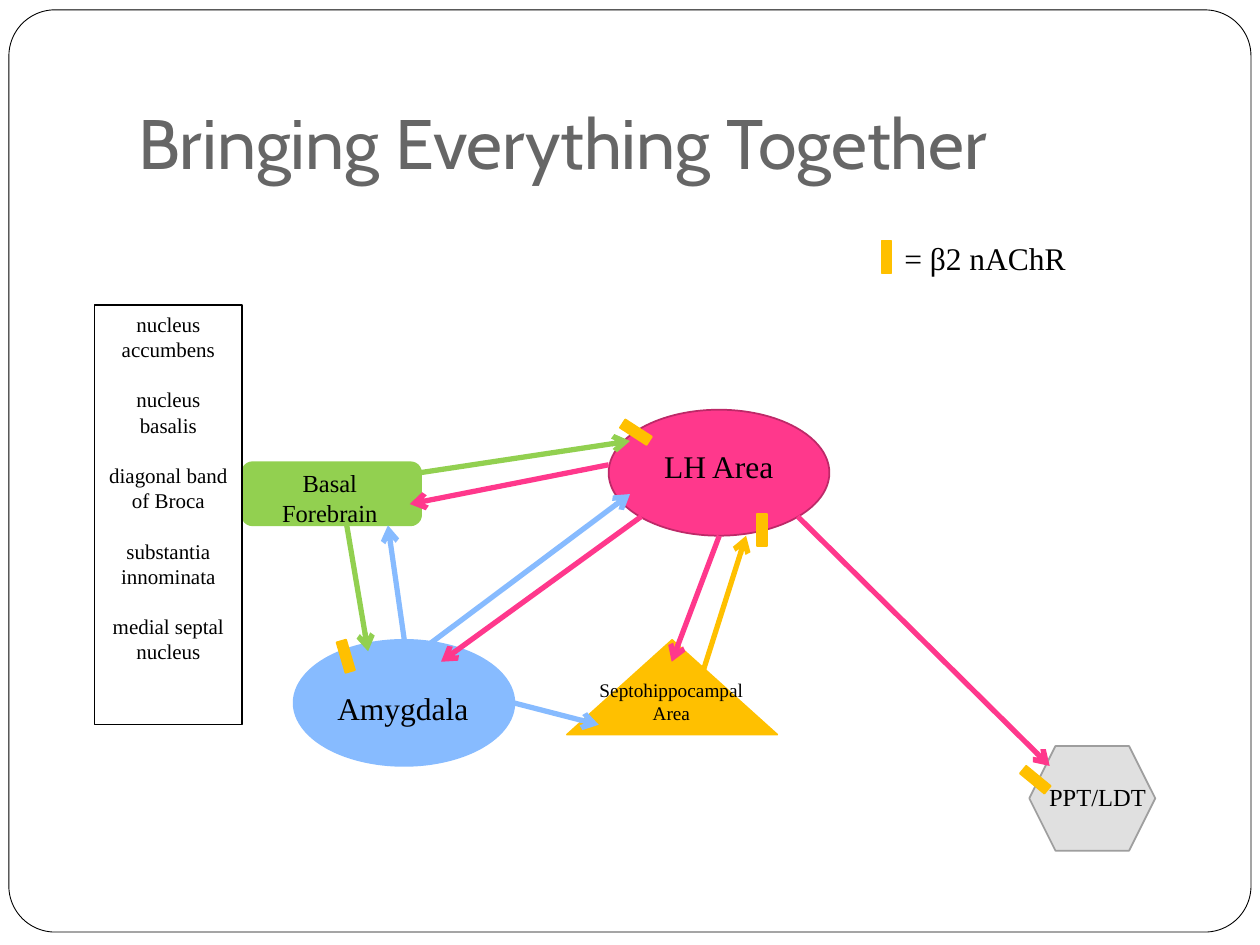
from lxml import etree
from pptx import Presentation, util as u
from pptx.dml.color import RGBColor
from pptx.enum import shapes, text
from pptx.oxml.ns import qn

WHITE = RGBColor(0xFF, 0xFF, 0xFF)
BLACK = RGBColor(0x00, 0x00, 0x00)
TITLE_GRAY = RGBColor(0x66, 0x66, 0x66)
PINK = RGBColor(0xFF, 0x38, 0x8C)
DARK_PINK = RGBColor(0xBD, 0x29, 0x68)
BLUE = RGBColor(0x87, 0xBB, 0xFF)
GREEN = RGBColor(0x92, 0xD0, 0x50)
GOLD = RGBColor(0xFF, 0xC0, 0x00)
LIGHT_GRAY = RGBColor(0xE0, 0xE0, 0xE0)
MID_GRAY = RGBColor(0x9E, 0x9E, 0x9E)

SHAPE = shapes.MSO_SHAPE
CENTER = text.PP_ALIGN.CENTER
LEFT = text.PP_ALIGN.LEFT


def apply_format(target, values):
    for name, value in values.items():
        setattr(target, name, value)


def place(item, bounds):
    names = ("left", "top", "width", "height")
    apply_format(item, dict(zip(names, map(u.Cm, bounds))))


class Diagram:
    body_font = "Times New Roman"
    title_font = "Cabin"

    def __init__(self, deck):
        self.page = deck.slides.add_slide(deck.slide_layouts[5])

    def add_lines(self, frame, lines, size, align, font=None, color=BLACK, gap=0):
        for index, line in enumerate(lines):
            para = frame.add_paragraph() if index else frame.paragraphs[0]
            para.alignment = align
            if index and gap:
                para.space_before = u.Pt(gap)
            span = para.add_run()
            span.text = line
            apply_format(span.font, {"size": u.Pt(size), "name": font or self.body_font})
            span.font.color.rgb = color

    def title(self, wording, bounds):
        box = self.page.shapes.title
        place(box, bounds)
        apply_format(box.text_frame, {
            "vertical_anchor": text.MSO_ANCHOR.BOTTOM,
            "auto_size": text.MSO_AUTO_SIZE.NONE,
            "word_wrap": True,
            "margin_bottom": u.Cm(0.25),
        })
        self.add_lines(box.text_frame, [wording], 40, LEFT, self.title_font, TITLE_GRAY)

    def shape(self, kind, bounds, fill, line, weight=1, rotation=0):
        item = self.page.shapes.add_shape(kind, *map(u.Cm, bounds))
        item.rotation = rotation
        item.shadow.inherit = False
        if fill is None:
            item.fill.background()
        else:
            item.fill.solid()
            item.fill.fore_color.rgb = fill
        item.line.color.rgb = line
        item.line.width = u.Pt(weight)
        return item

    def frame(self, bounds):
        border = self.shape(SHAPE.ROUNDED_RECTANGLE, bounds, WHITE, BLACK, 0.5)
        border.adjustments[0] = 0.05
        tree = border.element.getparent()
        tree.insert(2, border.element)

    def label(self, wording, bounds, size, align=CENTER):
        box = self.page.shapes.add_textbox(*map(u.Cm, bounds))
        box.text_frame.word_wrap = True
        self.add_lines(box.text_frame, [wording], size, align)

    def listing(self, lines, bounds):
        box = self.shape(SHAPE.RECTANGLE, bounds, None, BLACK, 0.75)
        apply_format(box.text_frame, {
            "vertical_anchor": text.MSO_ANCHOR.TOP,
            "word_wrap": True,
        })
        self.add_lines(box.text_frame, lines, 12, CENTER, gap=14.4)

    def arrow(self, ends, color):
        line = self.page.shapes.add_connector(
            shapes.MSO_CONNECTOR.STRAIGHT, *map(u.Cm, ends))
        line.line.color.rgb = color
        line.line.width = u.Pt(3)
        properties = line.element.spPr
        etree.SubElement(properties.find(qn("a:ln")), qn("a:tailEnd"), type="arrow")
        etree.SubElement(properties, qn("a:effectLst"))

    def receptor(self, left, top, rotation):
        self.shape(SHAPE.RECTANGLE, (left, top, 0.64, 0.2), GOLD, GOLD, rotation=rotation)


REGIONS = [
    (SHAPE.OVAL, (12.27, 8.26, 4.45, 2.54), PINK, DARK_PINK,
     "LH Area", (11.63, 8.89, 5.72, 1.02), 18),
    (SHAPE.OVAL, (5.92, 12.9, 4.45, 2.54), BLUE, BLUE,
     "Amygdala", (6.55, 13.77, 3.38, 1.02), 18),
    (SHAPE.ROUNDED_RECTANGLE, (4.88, 9.32, 3.61, 1.27), GREEN, GREEN,
     "Basal Forebrain", (5.28, 9.32, 2.74, 1.45), 14),
    (SHAPE.ISOSCELES_TRIANGLE, (11.43, 12.9, 4.24, 1.91), GOLD, GOLD,
     "Septohippocampal Area", (11.63, 13.54, 3.81, 1.19), 11),
    (SHAPE.HEXAGON, (20.75, 15.04, 2.54, 2.11), LIGHT_GRAY, MID_GRAY,
     "PPT/LDT", (20.12, 15.65, 4.01, 0.86), 14),
]
PATHWAYS = [
    (PINK, [(16.08, 10.41, 21.16, 15.44), (14.5, 10.8, 13.54, 13.34),
            (12.93, 10.41, 8.89, 13.34), (12.27, 9.37, 8.26, 10.16)]),
    (GREEN, [(6.99, 10.59, 7.42, 13.13), (8.46, 9.53, 12.7, 8.89)]),
    (GOLD, [(14.17, 13.54, 15.04, 10.8)]),
    (BLUE, [(8.15, 12.9, 7.82, 10.59), (8.46, 13.13, 12.7, 9.96),
            (10.36, 14.17, 12.07, 14.61)]),
]
RECEPTORS = [(17.55, 5.08, 90), (15.04, 10.59, 90), (20.55, 15.62, 39.5),
             (6.65, 13.13, 73.7), (12.5, 8.61, 212.9)]
FOREBRAIN_PARTS = ["nucleus accumbens", "nucleus basalis", "diagonal band of Broca",
                   "substantia innominata", "medial septal nucleus"]


def main():
    deck = Presentation()
    apply_format(deck, {"slide_width": u.Cm(25.4), "slide_height": u.Cm(19.05)})
    diagram = Diagram(deck)
    diagram.frame((0.18, 0.2, 25.04, 18.59))
    diagram.title("Bringing Everything Together", (2.54, 0.76, 21.59, 3.18))
    for kind, bounds, fill, line, name, label_bounds, size in REGIONS:
        diagram.shape(kind, bounds, fill, line)
        diagram.label(name, label_bounds, size, LEFT if name == "Amygdala" else CENTER)
    diagram.listing(FOREBRAIN_PARTS, (1.91, 6.15, 2.97, 8.46))
    for color, routes in PATHWAYS:
        for ends in routes:
            diagram.arrow(ends, color)
    for left, top, rotation in RECEPTORS:
        diagram.receptor(left, top, rotation)
    diagram.label("= β2 nAChR", (17.98, 4.7, 4.01, 1.02), 18, LEFT)
    deck.save("out.pptx")


if __name__ == "__main__":
    main()
